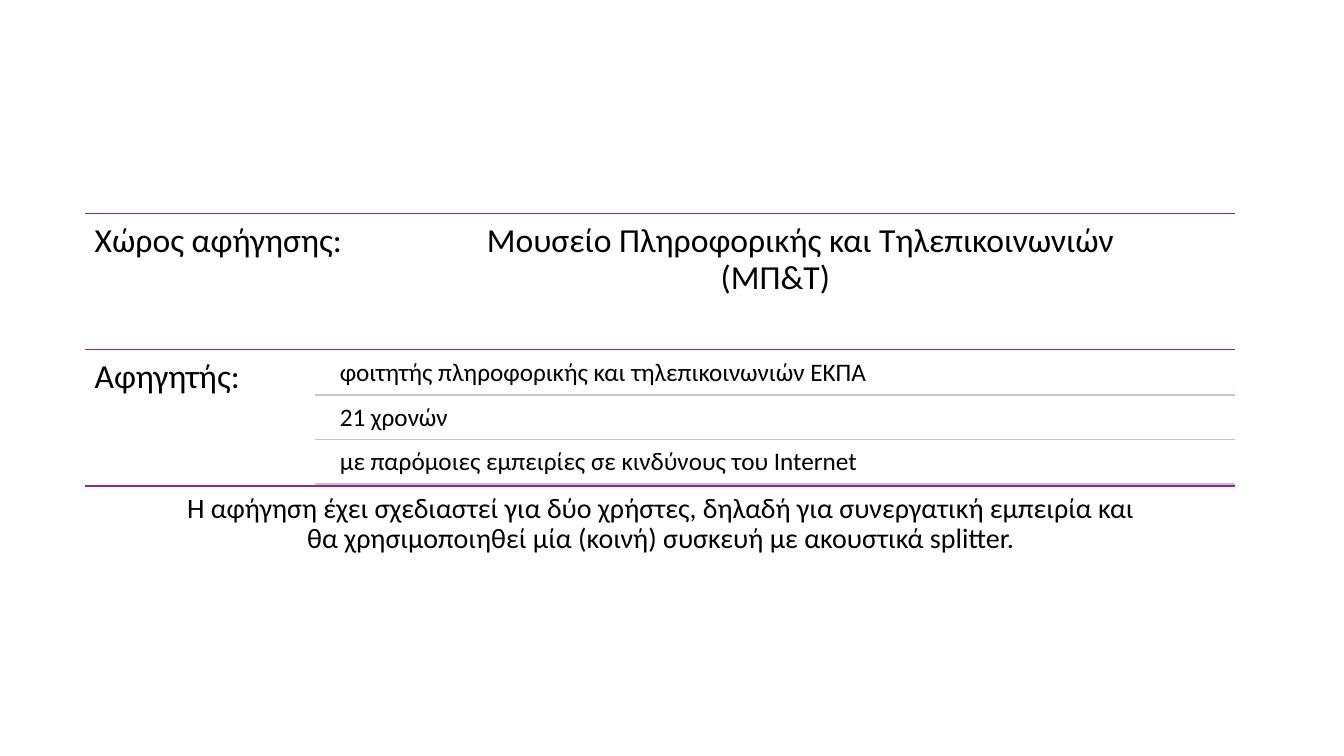
from lxml import etree
from pptx import Presentation
from pptx.dml.color import RGBColor
from pptx.enum import shapes, text
from pptx.oxml import ns
from pptx.util import Pt

PX = 9144  # 100 px to the inch
BLACK = RGBColor(0x00, 0x00, 0x00)
PURPLE = RGBColor(0x92, 0x27, 0x8F)
MAUVE = RGBColor(0xD2, 0xBE, 0xD1)
LEFT, RIGHT = 84, 1225
DETAIL_LEFT = 312
ROW_TOP, ROW_H = 212, 135
DETAIL_TOP, DETAIL_STEP = 350, 44

prs = Presentation()
prs.slide_width, prs.slide_height = 1333 * PX, 750 * PX
s = prs.slides.add_slide(prs.slide_layouts[6])


def add_rule(x, y, color):
    """Draw a horizontal line from x to the right edge of the list."""
    line = s.shapes.add_connector(shapes.MSO_CONNECTOR.STRAIGHT, x * PX, y * PX, RIGHT * PX, y * PX)
    line.line.color.rgb = color
    line.line.width = Pt(1)
    etree.SubElement(line._element.spPr, ns.qn("a:effectLst"))


def add_text(x, y, w, h, words, size, inset, align=text.PP_ALIGN.LEFT):
    tf = s.shapes.add_textbox(x * PX, y * PX, w * PX, h * PX).text_frame
    tf.word_wrap = True
    tf.margin_left = tf.margin_right = tf.margin_top = tf.margin_bottom = inset * PX
    p = tf.paragraphs[0]
    p.text = words
    p.alignment = align
    p.line_spacing = 0.9
    for r in p.runs:
        r.font.name = "Calibri"
        r.font.size = Pt(size)
        r.font.color.rgb = BLACK
    return p


for i in range(3):
    add_rule(LEFT, ROW_TOP + i * ROW_H, PURPLE)

place = add_text(LEFT, ROW_TOP, RIGHT - LEFT, ROW_H,
                 "Χώρος αφήγησης:\tΜουσείο Πληροφορικής και Τηλεπικοινωνιών\v\t\t(ΜΠ&Τ)", 24, 10)
tabs = etree.SubElement(place._p.get_or_add_pPr(), ns.qn("a:tabLst"))
for stop in (389, 621):
    etree.SubElement(tabs, ns.qn("a:tab"), pos=str(stop * PX), algn="l")

add_text(LEFT, ROW_TOP + ROW_H, DETAIL_LEFT - LEFT, ROW_H, "Αφηγητής:", 24, 10)

details = [
    "φοιτητής πληροφορικής και τηλεπικοινωνιών ΕΚΠΑ",
    "21 χρονών",
    "με παρόμοιες εμπειρίες σε κινδύνους του Internet",
]
for i, detail in enumerate(details):
    y = DETAIL_TOP + i * DETAIL_STEP
    add_text(330, y, 896, 42, detail, 18, 7)
    add_rule(DETAIL_LEFT, y + 42, MAUVE)

add_text(163, 482, 985, ROW_H,
         "Η αφήγηση έχει σχεδιαστεί για δύο χρήστες, δηλαδή για συνεργατική εμπειρία και "
         "θα χρησιμοποιηθεί μία (κοινή) συσκευή με ακουστικά splitter.",
         20, 8, text.PP_ALIGN.CENTER)

prs.save("out.pptx")
